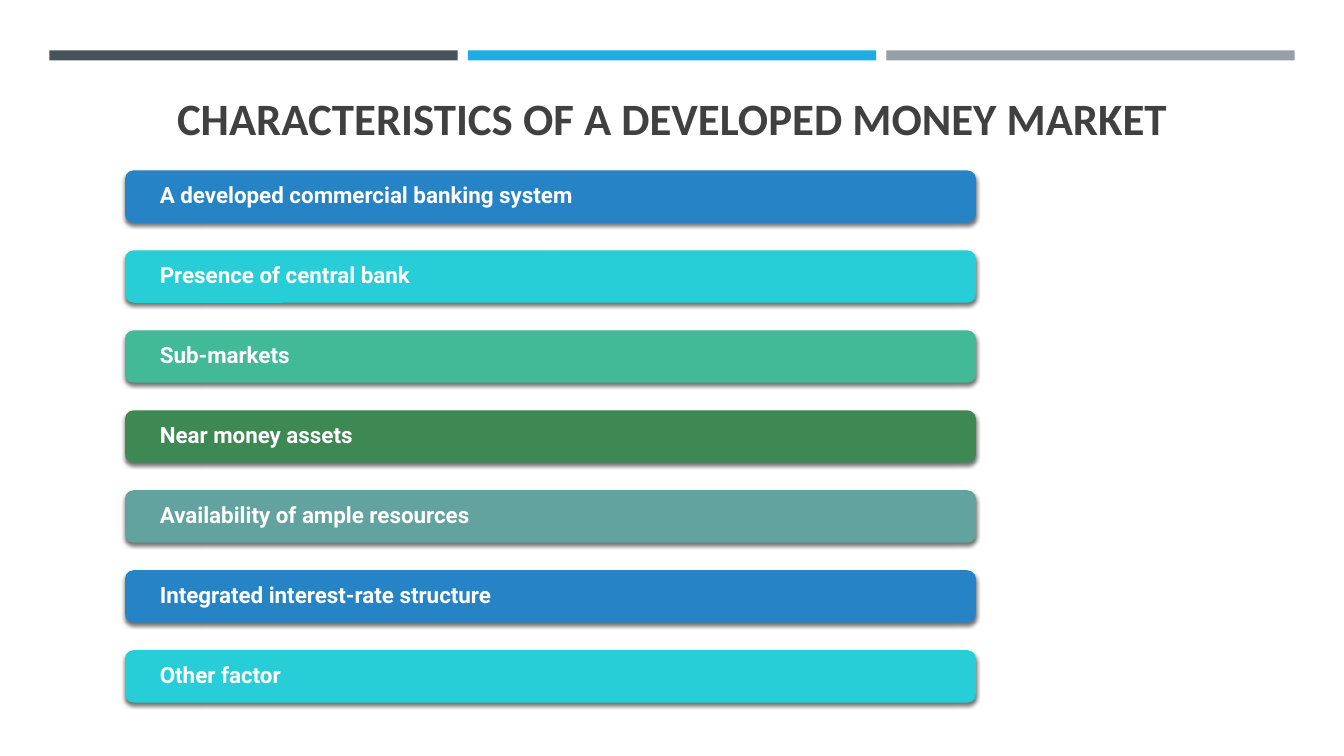
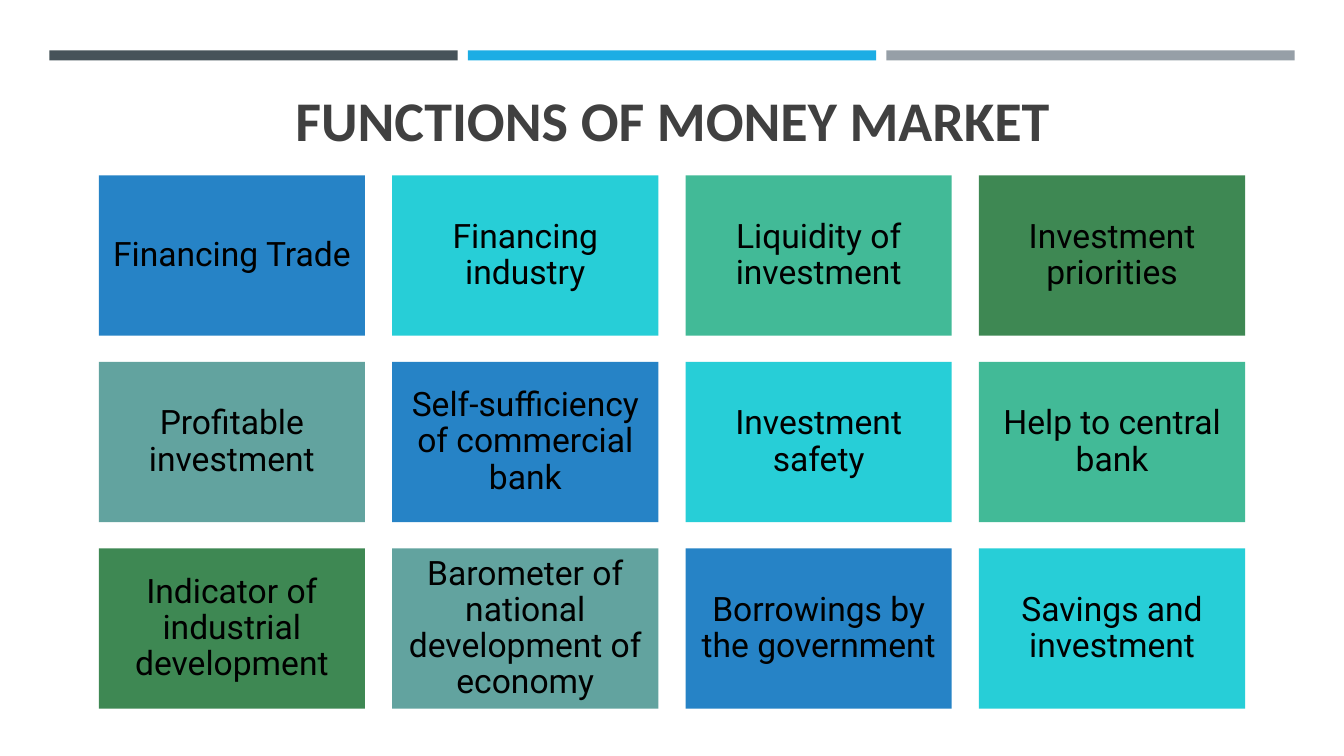
"""Builds two slides on the money market."""
from itertools import cycle

from lxml import etree
from pptx import Presentation, util as u
from pptx.dml.color import RGBColor
from pptx.enum import shapes, text
from pptx.oxml import ns

WHITE = RGBColor(0xFF, 0xFF, 0xFF)
BLACK = RGBColor(0x00, 0x00, 0x00)
TITLE = RGBColor(0x40, 0x40, 0x40)
BANDS = [RGBColor(0x46, 0x53, 0x59), RGBColor(0x1C, 0xAD, 0xE4), RGBColor(0x96, 0x9F, 0xA7)]
ACCENTS = [
    RGBColor(0x26, 0x83, 0xC6),
    RGBColor(0x27, 0xCE, 0xD7),
    RGBColor(0x42, 0xBA, 0x97),
    RGBColor(0x3E, 0x88, 0x53),
    RGBColor(0x62, 0xA3, 0x9F),
]

CHARACTERISTICS = [
    "A developed commercial banking system",
    "Presence of central bank",
    "Sub-markets",
    "Near money assets",
    "Availability of ample resources",
    "Integrated interest-rate structure",
    "Other factor",
]
FUNCTIONS = [
    "Financing Trade",
    "Financing industry",
    "Liquidity of investment",
    "Investment priorities",
    "Profitable investment",
    "Self-sufficiency of commercial bank",
    "Investment safety",
    "Help to central bank",
    "Indicator of industrial development",
    "Barometer of national development of economy",
    "Borrowings by the government",
    "Savings and investment",
]


def write(tf, content, *, font, size, color, bold=False, align=text.PP_ALIGN.CENTER,
          anchor=text.MSO_ANCHOR.MIDDLE, spacing=0.9, inset=(0.1, 0.1)):
    """Fill a text frame with one formatted paragraph."""
    tf.word_wrap = True
    tf.auto_size = text.MSO_AUTO_SIZE.NONE
    tf.vertical_anchor = anchor
    tf.margin_left = tf.margin_right = u.Inches(inset[0])
    tf.margin_top = tf.margin_bottom = u.Inches(inset[1])
    p = tf.paragraphs[0]
    p.alignment = align
    p.line_spacing = spacing
    r = p.add_run()
    r.text = content
    r.font.name = font
    r.font.size = u.Pt(size)
    r.font.bold = bold
    r.font.color.rgb = color


def grid(count, cols, area, cell):
    """Yield the boxes of equal cells spread evenly over an area."""
    left, top, width, height = area
    w, h = cell
    rows = -(-count // cols)
    dx = (width - w) / max(cols - 1, 1)
    dy = (height - h) / max(rows - 1, 1)
    for i in range(count):
        row, col = divmod(i, cols)
        yield left + col * dx, top + row * dy, w, h


class Deck:
    """Holds the shared style and the current slide."""

    def __init__(self):
        """Start a widescreen presentation."""
        self.prs = Presentation()
        self.prs.slide_width = u.Inches(13.33)
        self.prs.slide_height = u.Inches(7.5)
        self.s = None

    def slide(self, title, size, height):
        """Add a slide with the three bands and a title."""
        self.s = self.prs.slides.add_slide(self.prs.slide_layouts[5])
        for box, color in zip(grid(3, 3, (0.49, 0.5, 12.35, 0.1), (4.05, 0.1)), BANDS):
            self.block(box, color)
        sp = self.s.shapes.title
        sp.left, sp.top, sp.width, sp.height = map(u.Inches, (0.64, 0.77, 12.06, height))
        write(sp.text_frame, title, font="Calibri", size=size, color=TITLE, bold=True,
              anchor=text.MSO_ANCHOR.BOTTOM, inset=(0.1, 0.05))

    def block(self, box, color, kind=shapes.MSO_SHAPE.RECTANGLE):
        """Add a plain filled shape."""
        sp = self.s.shapes.add_shape(kind, *map(u.Inches, box))
        sp.shadow.inherit = False
        sp.fill.solid()
        sp.fill.fore_color.rgb = color
        sp.line.fill.background()
        return sp

    def shadow(self, sp):
        """Drop a soft shadow below a shape."""
        effects = sp.element.spPr.find(ns.qn("a:effectLst"))
        outer = etree.SubElement(effects, ns.qn("a:outerShdw"), blurRad=str(u.Pt(3)),
                                 dist=str(u.Pt(2)), dir="5400000", rotWithShape="0")
        color = etree.SubElement(outer, ns.qn("a:srgbClr"), val=str(BLACK))
        etree.SubElement(color, ns.qn("a:alpha"), val="55000")

    def bars(self, items):
        """Stack rounded bars with bold labels."""
        boxes = grid(len(items), 1, (1.24, 1.69, 8.44, 5.28), (8.44, 0.52))
        for item, box, color in zip(items, boxes, cycle(ACCENTS)):
            sp = self.block(box, color, shapes.MSO_SHAPE.ROUNDED_RECTANGLE)
            self.shadow(sp)
            write(sp.text_frame, item, font="Roboto", size=16, color=WHITE, bold=True,
                  align=text.PP_ALIGN.LEFT, inset=(0.32, 0))

    def tiles(self, items):
        """Lay out rectangular tiles in four columns."""
        boxes = grid(len(items), 4, (0.98, 1.74, 11.37, 5.29), (2.64, 1.59))
        for item, box, color in zip(items, boxes, cycle(ACCENTS)):
            sp = self.block(box, color)
            write(sp.text_frame, item, font="Roboto", size=24, color=BLACK)


def main():
    """Build and save the deck."""
    deck = Deck()
    deck.slide("CHARACTERISTICS OF A DEVELOPED MONEY MARKET", 32, 0.72)
    deck.bars(CHARACTERISTICS)
    deck.slide("FUNCTIONS OF MONEY MARKET", 40, 0.8)
    deck.tiles(FUNCTIONS)
    deck.prs.save("out.pptx")


if __name__ == "__main__":
    main()
